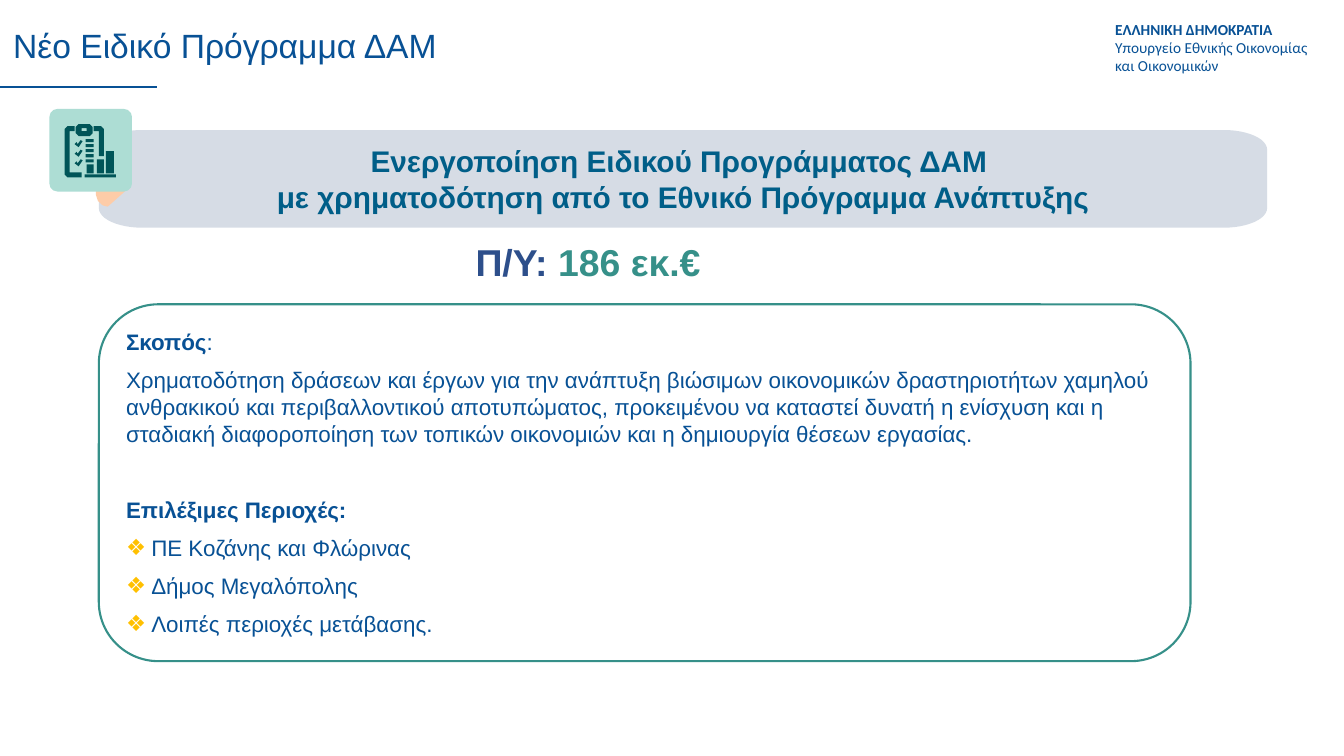
from math import cos, sin, pi
from lxml import etree
from pptx import Presentation, util as u
from pptx.dml.color import RGBColor
from pptx.enum import shapes, text
from pptx.oxml.ns import qn

Pt = u.Pt
NAVY, TEAL, GOLD = "085195", "369089", "FFC000"

# Content: paragraphs are lists of (words, bold, colour)
TITLE = [[("Νέο Ειδικό Πρόγραμμα ΔΑΜ", False, NAVY)]]
BANNER = [
    [("Ενεργοποίηση Ειδικού Προγράμματος ΔΑΜ ", True, "005E88")],
    [("με χρηματοδότηση από το Εθνικό Πρόγραμμα Ανάπτυξης", True, "005E88")],
]
BUDGET = [[("Π/Υ: ", True, "2D4F8B"), ("186 εκ.€", True, TEAL)]]
OFFICE = [
    [("ΕΛΛΗΝΙΚΗ ΔΗΜΟΚΡΑΤΙΑ", True, NAVY)],
    [("Υπουργείο Εθνικής Οικονομίας", False, NAVY)],
    [("και Οικονομικών", False, NAVY)],
]
AIM = [
    [("Σκοπός", True, NAVY), (":", False, NAVY)],
    [("Χρηματοδότηση δράσεων και έργων για την ανάπτυξη βιώσιμων οικονομικών "
      "δραστηριοτήτων χαμηλού ανθρακικού και περιβαλλοντικού αποτυπώματος, "
      "προκειμένου να καταστεί δυνατή η ενίσχυση και η σταδιακή διαφοροποίηση "
      "των τοπικών οικονομιών και η δημιουργία θέσεων εργασίας.", False, NAVY)],
]
AREAS_HEAD = [("Επιλέξιμες Περιοχές:", True, NAVY)]
AREAS = ["ΠΕ Κοζάνης και Φλώρινας", "Δήμος Μεγαλόπολης",
         "Λοιπές περιοχές μετάβασης."]

# Icon outlines on a grid of 0.72 pt
GRID = 0.72
FRAME = [
    [(29, 2), (36, 2), (39, 5), (39, 32), (34, 32), (34, 7), (29, 7)],
    [(10, 2), (3, 2), (0, 5), (0, 50), (3, 53), (17, 53), (17, 48),
     (5, 48), (5, 7), (10, 7)],
    [(14, 0), (25, 0), (28, 3), (28, 9), (25, 12), (14, 12), (11, 9), (11, 3)],
    [(17, 4), (17, 7), (22, 7), (22, 4)],
]
TICK = [(10, 20), (12, 18), (13, 20), (16, 16), (18, 17), (14, 23)]
BARS = [(22, 40, 29, 49), (32, 35, 39, 49), (41, 27, 49, 49), (20, 50, 51, 53)]

deck = Presentation()
deck.slide_width, deck.slide_height = Pt(960), Pt(540)
slide = deck.slides.add_slide(deck.slide_layouts[5])


def tint(code):
    return RGBColor.from_string(code)


def place(shape, box):
    shape.left, shape.top, shape.width, shape.height = map(Pt, box)


def paint(shape, fill=None, line=None):
    shape.shadow.inherit = False
    if fill:
        shape.fill.solid()
        shape.fill.fore_color.rgb = tint(fill)
    else:
        shape.fill.background()
    if line:
        shape.line.color.rgb = tint(line)
        shape.line.width = Pt(1.5)
    else:
        shape.line.fill.background()


def write(shape, paras, size, font="Arial", align="LEFT", anchor="TOP",
          pad=(7.2, 3.6), before=0):
    frame = shape.text_frame
    frame.word_wrap = True
    frame.auto_size = text.MSO_AUTO_SIZE.NONE
    frame.vertical_anchor = text.MSO_ANCHOR[anchor]
    frame.margin_left = frame.margin_right = Pt(pad[0])
    frame.margin_top = frame.margin_bottom = Pt(pad[1])
    for i, runs in enumerate(paras):
        para = frame.add_paragraph() if i else frame.paragraphs[0]
        para.alignment = text.PP_ALIGN[align]
        para.space_before = Pt(before)
        for words, bold, code in runs:
            run = para.add_run()
            run.text = words
            run.font.name, run.font.size, run.font.bold = font, Pt(size), bold
            run.font.color.rgb = tint(code)
    return frame.paragraphs


def bullet(para, mark, code):
    props = para._p.get_or_add_pPr()
    props.set("marL", str(Pt(18)))
    props.set("indent", str(Pt(-18)))
    shade = etree.SubElement(props, qn("a:buClr"))
    etree.SubElement(shade, qn("a:srgbClr")).set("val", code)
    etree.SubElement(props, qn("a:buFont")).set("typeface", "Arial")
    etree.SubElement(props, qn("a:buChar")).set("char", mark)


def outline(loops, fill):
    loops = [[(Pt(x), Pt(y)) for x, y in loop] for loop in loops]
    pen = slide.shapes.build_freeform(*loops[0][0])
    for i, loop in enumerate(loops):
        if i:
            pen.move_to(*loop[0])
        pen.add_line_segments(loop[1:], close=True)
    shape = pen.convert_to_shape()
    paint(shape, fill)
    return shape


def block(x1, y1, x2, y2):
    return [(x1, y1), (x2, y1), (x2, y2), (x1, y2)]


def oval_box(left, top, wide, high, rx, ry, steps=12):
    """Box whose corners are quarter ellipses."""
    mids = [(left + wide - rx, top + high - ry), (left + rx, top + high - ry),
            (left + rx, top + ry), (left + wide - rx, top + ry)]
    return [(x + rx * cos(a), y + ry * sin(a))
            for q, (x, y) in enumerate(mids)
            for a in [(q + s / steps) * pi / 2 for s in range(steps + 1)]]


def box(kind, at, fill=None, line=None):
    shape = slide.shapes.add_shape(shapes.MSO_SHAPE[kind], *map(Pt, at))
    paint(shape, fill, line)
    return shape


# Aim and areas panel
panel = box("ROUNDED_RECTANGLE", (70.6, 217.4, 779.8, 254.9), line=TEAL)
paras = write(panel, AIM + [AREAS_HEAD] + [[(a, False, NAVY)] for a in AREAS],
              16, anchor="MIDDLE", before=8)
paras[len(AIM)].space_before = Pt(35)
for para in paras[-len(AREAS):]:
    bullet(para, "❖", GOLD)

# Banner
banner = outline([oval_box(70.6, 92.9, 834.5, 69.8, 31, 14)], "D6DCE5")
write(banner, BANNER, 21.3, align="CENTER", anchor="MIDDLE", pad=(9.6, 4.8))

# Icon: peach tab, tile, clipboard with chart
outline([[(90.7, 135.4), (77, 147.6), (73.4, 146.8), (70, 143.6),
          (68.4, 139), (68.4, 135.4)]], "FDCCA8")
tile = box("ROUNDED_RECTANGLE", (35.3, 77.8, 59, 59), fill="ADDDD4")
tile.adjustments[0] = 0.097
rules = [block(21, 15 + 5 * i, 29, 18 + 5 * i) for i in range(5)]
ticks = [[(x, y + 9.5 * i) for x, y in TICK] for i in range(3)]
loops = FRAME + rules + ticks + [block(*bar) for bar in BARS]
outline([[(46.1 + x * GRID, 88.6 + y * GRID) for x, y in loop]
         for loop in loops], "005558")

# Budget and ministry name
budget = slide.shapes.add_textbox(*map(Pt, (332.6, 167, 183, 39.6)))
write(budget, BUDGET, 26.7, before=8)
office = slide.shapes.add_textbox(*map(Pt, (787, 9.4, 172.8, 49.7)))
write(office, OFFICE, 10.9, font="Calibri", pad=(9.6, 4.8))

# Title and its rule
title = slide.shapes.title
place(title, (2.2, 0.7, 689, 62.6))
write(title, TITLE, 24, anchor="MIDDLE", pad=(7.2, 7.2))
rule = slide.shapes.add_connector(shapes.MSO_CONNECTOR.STRAIGHT,
                                  Pt(0), Pt(62), Pt(112.3), Pt(62))
rule.line.color.rgb = tint(NAVY)
rule.line.width = Pt(1.5)
etree.SubElement(rule._element.spPr, qn("a:effectLst"))

deck.save("out.pptx")
